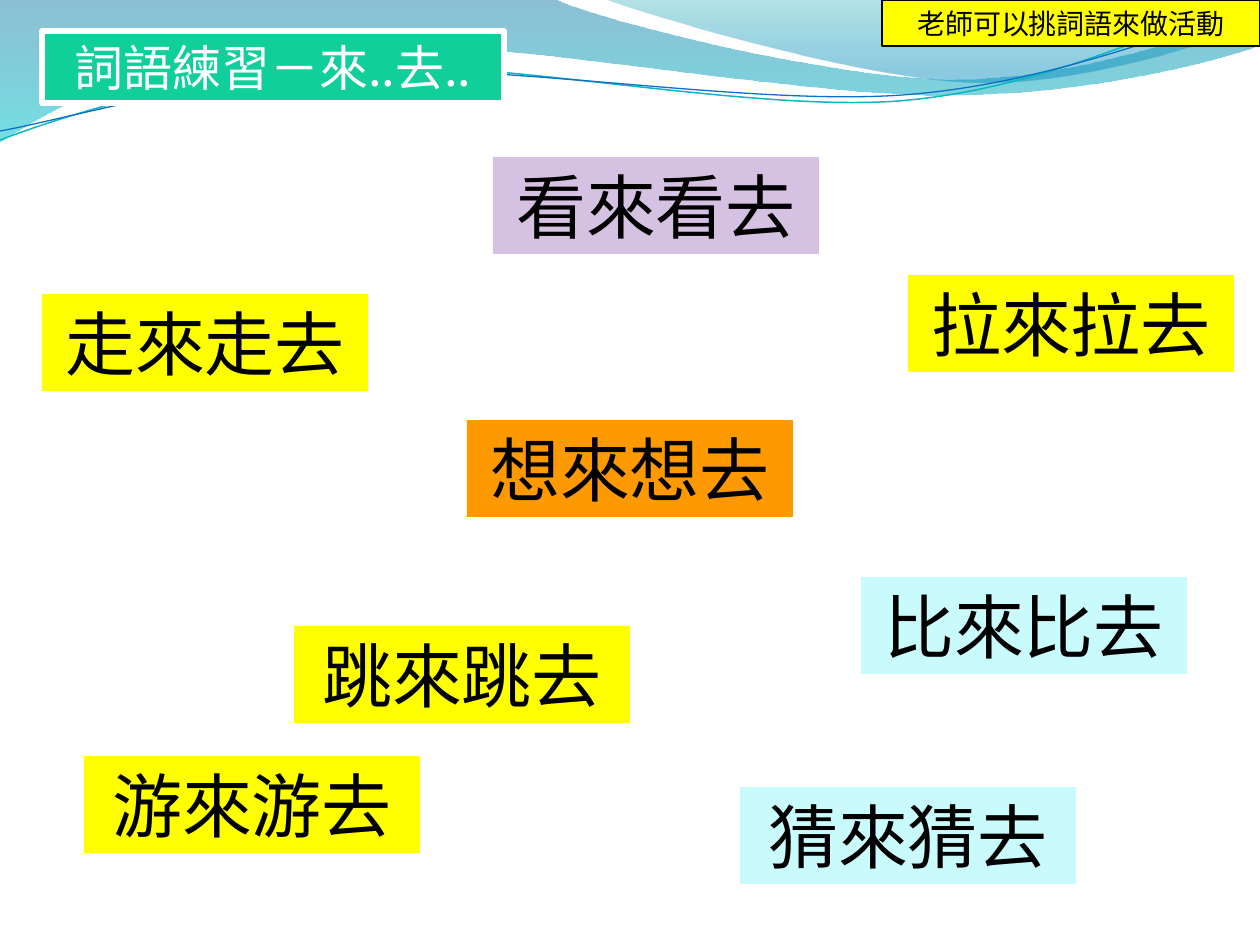
from lxml import etree
from pptx import Presentation
from pptx import util as u
from pptx.dml.color import RGBColor
from pptx.enum import shapes, text
from pptx.oxml.ns import qn

PX = u.Inches(1) / 126
FONT = "Noto Sans CJK SC"

BLACK = RGBColor(0x00, 0x00, 0x00)
WHITE = RGBColor(0xFF, 0xFF, 0xFF)
YELLOW = RGBColor(0xFF, 0xFF, 0x00)
ORANGE = RGBColor(0xFF, 0x99, 0x00)
LILAC = RGBColor(0xD5, 0xC1, 0xE1)
PALE_CYAN = RGBColor(0xC9, 0xFA, 0xFC)
GREEN = RGBColor(0x10, 0xCF, 0x9B)
DEEP_BLUE = RGBColor(0x00, 0x74, 0xA1)
AQUA = RGBColor(0x00, 0xC6, 0xCF)
SEA_GREEN = RGBColor(0x00, 0xA1, 0xA9)
SKY_BLUE = RGBColor(0x00, 0x8B, 0xBF)
TEAL = RGBColor(0x0A, 0xB8, 0xBF)
BLUE = RGBColor(0x0F, 0x6F, 0xC6)

TITLE = ("詞語練習－來..去..", (42, 31, 462, 72))
NOTE = ("老師可以挑詞語來做活動", (882, 0, 378, 46))

# word, left, top, width, fill
WORD_HEIGHT = 97
WORDS = [
    ("游來游去", 84, 756, 336, YELLOW),
    ("跳來跳去", 294, 626, 336, YELLOW),
    ("走來走去", 42, 294, 326, YELLOW),
    ("拉來拉去", 908, 275, 326, YELLOW),
    ("比來比去", 861, 577, 326, PALE_CYAN),
    ("猜來猜去", 740, 787, 336, PALE_CYAN),
    ("看來看去", 493, 157, 326, LILAC),
    ("想來想去", 467, 420, 326, ORANGE),
]

# Paths: a start point, then straight steps (one point) or curves (three points).
# Gradient stops: position, colour, opacity in percent.
WAVES = [
    ([[(0, 0)], [(554, -1)],
      [(600, 21), (837, 79), (955, 79)], [(1075, 79), (1207, 33), (1260, 11)],
      [(1261, 45)],
      [(1237, 55), (1096, 96), (940, 95)], [(783, 95), (481, 35), (324, 43)],
      [(163, 45), (58, 105), (-1, 142)]],
     [(0, DEEP_BLUE, 45), (1, AQUA, 55)]),
    ([[(604, -1)],
      [(641, 14), (859, 78), (969, 82)], [(1079, 87), (1211, 40), (1260, 26)],
      [(1260, 0)]],
     [(0, SEA_GREEN, 30), (0.8, SKY_BLUE, 45)]),
]
RIPPLES = [
    ([[(0, 140)], [(60, 117), (199, 72), (349, 66)],
      [(498, 59), (747, 112), (898, 101)], [(1050, 89), (1182, 19), (1257, -3)]],
     TEAL, 0.85),
    ([[(0, 131)], [(59, 121), (207, 77), (357, 71)],
      [(508, 64), (752, 106), (903, 95)], [(1053, 84), (1184, 26), (1260, 8)]],
     BLUE, 0.75),
]


def px(value):
    return u.Emu(round(value * PX))


def add_outline(slide, path, close):
    """Draw every point as a straight step, then join each three into a curve."""
    points = [(px(x), px(y)) for step in path for x, y in step]
    builder = slide.shapes.build_freeform(*points[0])
    builder.add_line_segments(points[1:], close=close)
    shape = builder.convert_to_shape()
    shape.shadow.inherit = False
    lines = iter(list(shape.element.iter(qn("a:lnTo"))))
    for step in path[1:]:
        parts = [next(lines) for _ in step]
        if len(parts) == 3:
            curve = etree.Element(qn("a:cubicBezTo"))
            parts[0].addprevious(curve)
            for part in parts:
                curve.append(part[0])
                part.getparent().remove(part)
    return shape


def add_wave(slide, path, stops):
    shape = add_outline(slide, path, True)
    shape.line.fill.background()
    shape.fill.gradient()
    shape.fill.gradient_angle = 270
    for stop, (position, color, _) in zip(shape.fill.gradient_stops, stops):
        stop.position = position
        stop.color.rgb = color
    colors = shape.element.spPr.iter(qn("a:srgbClr"))
    for element, (_, _, opacity) in zip(colors, stops):
        etree.SubElement(element, qn("a:alpha"), val=str(opacity * 1000))


def add_ripple(slide, path, color, width):
    shape = add_outline(slide, path, False)
    shape.fill.background()
    shape.line.color.rgb = color
    shape.line.width = u.Pt(width)


def format_label(shape, words, box, fill, size, color=BLACK, line=None, line_width=0.75):
    shape.left, shape.top, shape.width, shape.height = map(px, box)
    shape.shadow.inherit = False
    shape.fill.solid()
    shape.fill.fore_color.rgb = fill
    if line is None:
        shape.line.fill.background()
    else:
        shape.line.color.rgb = line
        shape.line.width = u.Pt(line_width)
    frame = shape.text_frame
    frame.word_wrap = True
    frame.auto_size = text.MSO_AUTO_SIZE.NONE
    frame.vertical_anchor = text.MSO_ANCHOR.TOP
    paragraph = frame.paragraphs[0]
    paragraph.alignment = text.PP_ALIGN.CENTER
    run = paragraph.add_run()
    run.text = words
    run.font.size = u.Pt(size)
    run.font.name = FONT
    run.font.color.rgb = color
    latin = next(shape.element.iter(qn("a:latin")))
    latin.addnext(etree.Element(qn("a:ea"), typeface=FONT))


def add_label(slide, words, box, fill, size, **options):
    shape = slide.shapes.add_shape(shapes.MSO_SHAPE.RECTANGLE, *map(px, box))
    format_label(shape, words, box, fill, size, **options)


def main():
    presentation = Presentation()
    presentation.slide_width, presentation.slide_height = px(1260), px(945)
    slide = presentation.slides.add_slide(presentation.slide_layouts[5])

    for path, stops in WAVES:
        add_wave(slide, path, stops)
    for path, color, width in RIPPLES:
        add_ripple(slide, path, color, width)
    for word, left, top, width, fill in WORDS:
        add_label(slide, word, (left, top, width, WORD_HEIGHT), fill, 40)

    title = slide.shapes.title
    format_label(title, *TITLE, GREEN, 28, color=WHITE, line=WHITE, line_width=3)
    title.element.getparent().append(title.element)  # in front of the waves

    add_label(slide, *NOTE, YELLOW, 16, line=BLACK)
    presentation.save("out.pptx")


if __name__ == "__main__":
    main()
